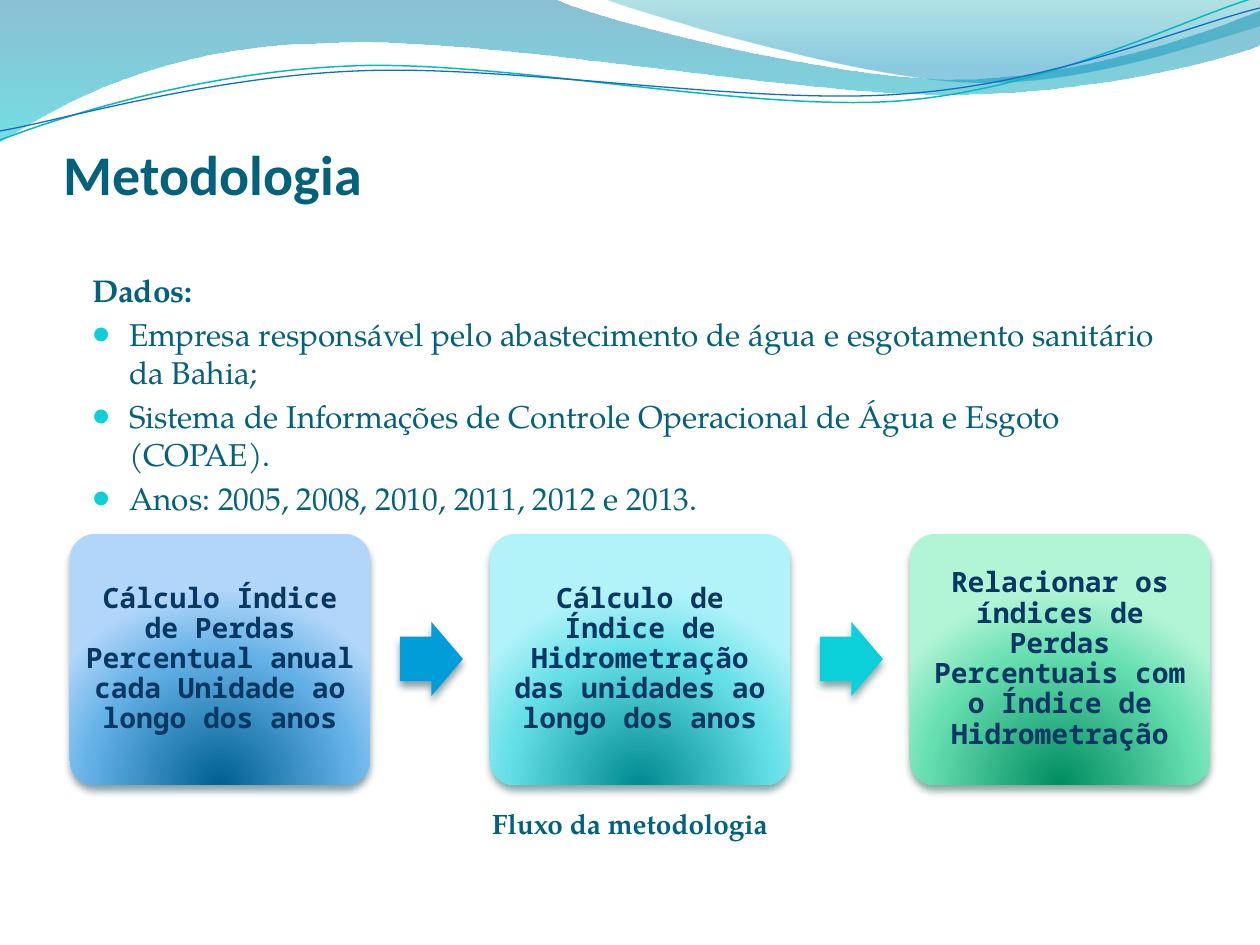
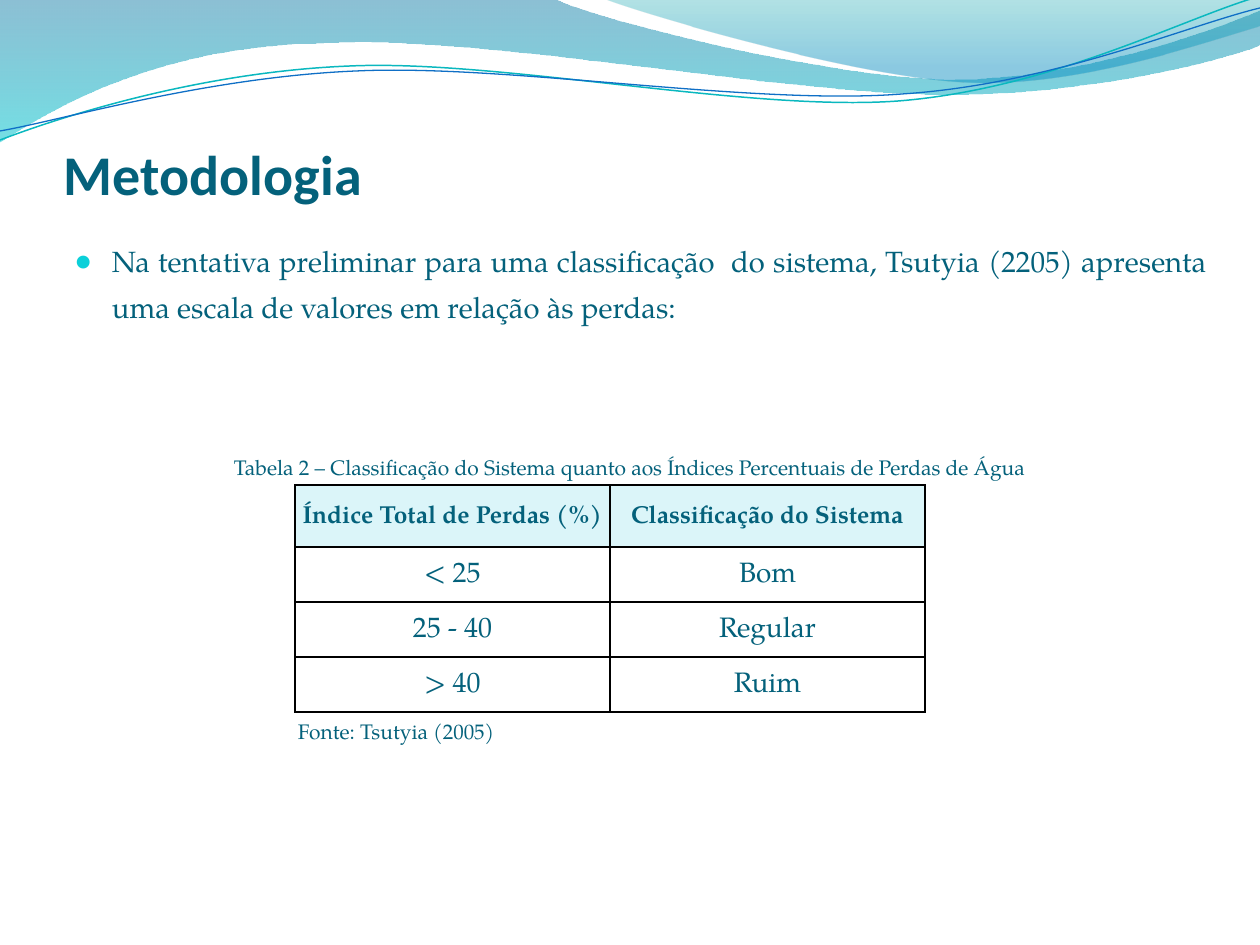
from dataclasses import dataclass

from pptx import Presentation
from pptx.dml.color import RGBColor
from pptx.enum.shapes import MSO_SHAPE as Preset
from pptx.enum.text import MSO_ANCHOR as Anchor, PP_ALIGN as Align
from pptx.oxml import parse_xml
from pptx.oxml.ns import nsdecls, qn
from pptx.util import Emu, Pt

PX = 914400 / 126


@dataclass(frozen=True)
class Theme:
    ink: str = "04617B"
    step_ink: str = "083763"
    bullet: str = "0BD0D9"
    header_fill: str = "DBF5F9"
    border: str = "000000"
    teal_line: str = "0AB8BF"
    blue_line: str = "0F6FC6"
    heading_font: str = "Calibri"
    body_font: str = "TeX Gyre Pagella"
    step_font: str = "Noto Sans Mono"
    title_size: float = 32
    body_size: float = 18
    intro_size: float = 16.7
    label_size: float = 16
    header_size: float = 14
    note_size: float = 12


THEME = Theme()

WAVES = [
    ([(0, 0), (554, -1),
      ((600, 21), (837, 79), (955, 79)),
      ((1075, 79), (1207, 33), (1260, 11)), (1261, 45),
      ((1239, 55), (1096, 96), (940, 94)),
      ((783, 94), (481, 35), (324, 43)),
      ((163, 45), (58, 105), (-1, 142))],
     [(0, "0074A1", 45), (100, "00C6CF", 55)]),
    ([(604, -1),
      ((641, 14), (859, 78), (969, 82)),
      ((1079, 87), (1211, 40), (1260, 26)), (1260, 0)],
     [(0, "00A1A9", 30), (80, "008BBF", 45)]),
]
RIPPLES = [
    ([(0, 140),
      ((60, 117), (199, 72), (349, 66)),
      ((498, 59), (747, 112), (898, 101)),
      ((1050, 89), (1182, 19), (1257, -3))], THEME.teal_line, 0.85),
    ([(0, 131),
      ((59, 121), (207, 77), (357, 71)),
      ((508, 64), (752, 106), (903, 94)),
      ((1053, 84), (1186, 26), (1260, 8))], THEME.blue_line, 0.75),
]
STEPS = [
    ("Cálculo Índice de Perdas Percentual anual cada Unidade ao longo dos anos",
     ("006091", "64B1E7", "B1D6F9"), "00374C", "009DD9"),
    ("Cálculo de Índice de Hidrometração das unidades ao longo dos anos",
     ("008A91", "64DFE7", "B1F3F9"), "024B4E", "0BD0D9"),
    ("Relacionar os índices de Perdas Percentuais com o Índice de Hidrometração",
     ("008C60", "65DEB0", "B2F4D6"), "044A37", None),
]
DATA_POINTS = [
    "Empresa responsável pelo abastecimento de água e esgotamento sanitário da Bahia;",
    "Sistema de Informações de Controle Operacional de Água e Esgoto (COPAE).",
    "Anos: 2005, 2008, 2010, 2011, 2012 e 2013.",
]
INTRO = ("Na tentativa preliminar para uma classificação  do sistema, Tsutyia (2205) "
         "apresenta uma escala de valores em relação às perdas:")
LOSS_CLASSES = [
    ("Índice Total de Perdas (%)", "Classificação do Sistema"),
    ("< 25", "Bom"),
    ("25 - 40", "Regular"),
    ("> 40", "Ruim"),
]


def px(length):
    return Emu(round(length * PX))


def rgb(colour):
    return RGBColor.from_string(colour)


def apply(target, values):
    for name, value in values.items():
        setattr(target, name, value)


def set_insets(target, left, top, right, bottom):
    apply(target, {"margin_left": px(left), "margin_top": px(top),
                   "margin_right": px(right), "margin_bottom": px(bottom)})


def write(para, text, size, font=THEME.body_font, colour=THEME.ink, bold=False, **layout):
    apply(para, layout)
    span = para.add_run()
    span.text = text
    apply(span.font, {"name": font, "size": Pt(size), "bold": bold})
    span.font.color.rgb = rgb(colour)


def add_bullet(para):
    props = para._p.get_or_add_pPr()
    indent = px(37)
    props.set("marL", str(indent))
    props.set("indent", str(-indent))
    for xml in (f'<a:buClr {nsdecls("a")}><a:srgbClr val="{THEME.bullet}"/></a:buClr>',
                f'<a:buSzPct {nsdecls("a")} val="95000"/>',
                f'<a:buFont {nsdecls("a")} typeface="{THEME.heading_font}"/>',
                f'<a:buChar {nsdecls("a")} char="●"/>'):
        props.append(parse_xml(xml))


def add_box(page, area, anchor=Anchor.TOP, wrap=True, insets=(13, 6, 13, 6)):
    frame = page.shapes.add_textbox(*map(px, area)).text_frame
    apply(frame, {"word_wrap": wrap, "vertical_anchor": anchor})
    set_insets(frame, *insets)
    return frame


def set_gradient(shape, stops, direction):
    marks = "".join(
        f'<a:gs pos="{pos * 1000}"><a:srgbClr val="{colour}">'
        f'<a:alpha val="{alpha * 1000}"/></a:srgbClr></a:gs>'
        for pos, colour, alpha in stops)
    shape.fill.background()
    props = shape._element.spPr
    props.replace(props.find(qn("a:noFill")), parse_xml(
        f'<a:gradFill {nsdecls("a")} rotWithShape="1"><a:gsLst>{marks}</a:gsLst>'
        f'{direction}</a:gradFill>'))


def set_shadow(shape, colour):
    shape.shadow.inherit = False
    shape._element.spPr.find(qn("a:effectLst")).append(parse_xml(
        f'<a:outerShdw {nsdecls("a")} blurRad="{Pt(4.5)}" dist="{Pt(3)}" dir="5400000" '
        f'rotWithShape="0"><a:srgbClr val="{colour}"><a:alpha val="48000"/>'
        f'</a:srgbClr></a:outerShdw>'))


def is_curve(piece):
    return isinstance(piece[0], tuple)


def bend_segments(shape, pieces):
    segments = list(shape._element.spPr.iter(qn("a:lnTo")))
    for segment, piece in zip(segments, pieces):
        if is_curve(piece):
            points = "".join(f'<a:pt x="{px(x) - shape.left}" y="{px(y) - shape.top}"/>'
                             for x, y in piece)
            segment.getparent().replace(segment, parse_xml(
                f'<a:cubicBezTo {nsdecls("a")}>{points}</a:cubicBezTo>'))


def add_outline(page, outline, close):
    start, *pieces = outline
    ends = [piece[-1] if is_curve(piece) else piece for piece in pieces]
    builder = page.shapes.build_freeform(*map(px, start))
    builder.add_line_segments([(px(x), px(y)) for x, y in ends], close=close)
    shape = builder.convert_to_shape()
    bend_segments(shape, pieces)
    shape.shadow.inherit = False
    return shape


def add_waves(page):
    for outline, stops in WAVES:
        wave = add_outline(page, outline, True)
        wave.line.fill.background()
        set_gradient(wave, stops, '<a:lin ang="5400000" scaled="0"/>')
    for outline, colour, width in RIPPLES:
        ripple = add_outline(page, outline, False)
        ripple.fill.background()
        ripple.line.color.rgb = rgb(colour)
        ripple.line.width = Pt(width)


def add_page(deck, title):
    page = deck.slides.add_slide(deck.slide_layouts[6])
    add_waves(page)
    frame = add_box(page, (64, 97, 1134, 110), Anchor.BOTTOM, insets=(0, 6, 0, 0))
    write(frame.paragraphs[0], title, THEME.title_size, THEME.heading_font, bold=True)
    return page


def add_preset(page, preset, area, adjustments, shadow):
    shape = page.shapes.add_shape(preset, *map(px, area))
    for index, value in enumerate(adjustments):
        shape.adjustments[index] = value
    shape.line.fill.background()
    set_shadow(shape, shadow)
    return shape


def add_step(page, left, text, colours, shadow):
    card = add_preset(page, Preset.ROUNDED_RECTANGLE, (left, 534, 300, 251), [0.1], shadow)
    set_gradient(card, [(pos, colour, 100) for pos, colour in zip((0, 68, 100), colours)],
                 '<a:path path="circle"><a:fillToRect l="50000" t="130000" '
                 'r="50000" b="-30000"/></a:path>')
    frame = card.text_frame
    apply(frame, {"word_wrap": True, "vertical_anchor": Anchor.MIDDLE})
    set_insets(frame, 2, 2, 2, 2)
    write(frame.paragraphs[0], text, THEME.label_size, THEME.step_font, THEME.step_ink,
          True, alignment=Align.CENTER, line_spacing=0.9)


def add_flow(page):
    for index, (text, colours, shadow, arrow_colour) in enumerate(STEPS):
        left = 70 + 420 * index
        add_step(page, left, text, colours, shadow)
        if arrow_colour:
            arrow = add_preset(page, Preset.RIGHT_ARROW, (left + 330, 622, 63, 74),
                               [0.6, 0.5], shadow)
            arrow.fill.solid()
            arrow.fill.fore_color.rgb = rgb(arrow_colour)


def add_caption(page, area, text, size, bold=False):
    frame = add_box(page, area, Anchor.MIDDLE)
    write(frame.paragraphs[0], text, size, bold=bold, alignment=Align.CENTER)


def set_borders(cell):
    props = cell._tc.get_or_add_tcPr()
    for index, side in enumerate(("lnL", "lnR", "lnT", "lnB")):
        props.insert(index, parse_xml(
            f'<a:{side} {nsdecls("a")} w="{Pt(1)}"><a:solidFill>'
            f'<a:srgbClr val="{THEME.border}"/></a:solidFill></a:{side}>'))


def add_loss_table(page):
    heights = (62, 55, 55, 55)
    area = map(px, (295, 485, 630, sum(heights)))
    table = page.shapes.add_table(len(LOSS_CLASSES), 2, *area).table
    apply(table, {"first_row": False, "horz_banding": False})
    for row, height, values in zip(table.rows, heights, LOSS_CLASSES):
        row.height = px(height)
        header = values is LOSS_CLASSES[0]
        size = THEME.header_size if header else THEME.label_size
        for cell, text in zip(row.cells, values):
            set_insets(cell, 6, 0, 6, 0)
            cell.vertical_anchor = Anchor.MIDDLE
            if header:
                cell.fill.solid()
                cell.fill.fore_color.rgb = rgb(THEME.header_fill)
            else:
                cell.fill.background()
            set_borders(cell)
            write(cell.text_frame.paragraphs[0], text, size, bold=header,
                  alignment=Align.CENTER, line_spacing=1.15)


def build_flow_page(deck):
    page = add_page(deck, "Metodologia")
    add_flow(page)
    frame = add_box(page, (79, 246, 1092, 266))
    write(frame.paragraphs[0], "Dados:", THEME.body_size, bold=True,
          line_spacing=1.5, space_before=Pt(3.6))
    for text in DATA_POINTS:
        para = frame.add_paragraph()
        write(para, text, THEME.body_size, space_before=Pt(3.6))
        add_bullet(para)
    add_caption(page, (0, 800, 1260, 46), "Fluxo da metodologia", THEME.label_size, True)


def build_table_page(deck):
    page = add_page(deck, "Metodologia")
    add_loss_table(page)
    add_caption(page, (0, 448, 1260, 38),
                "Tabela 2 – Classificação do Sistema quanto aos Índices Percentuais "
                "de Perdas de Água", THEME.note_size)
    source = add_box(page, (285, 713, 223, 38), wrap=False)
    write(source.paragraphs[0], "Fonte: Tsutyia (2005)", THEME.note_size)
    intro = add_box(page, (62, 227, 1158, 108)).paragraphs[0]
    write(intro, INTRO, THEME.intro_size, alignment=Align.JUSTIFY,
          line_spacing=1.3, space_before=Pt(3.3))
    add_bullet(intro)


def main():
    deck = Presentation()
    apply(deck, {"slide_width": px(1260), "slide_height": px(945)})
    build_flow_page(deck)
    build_table_page(deck)
    deck.save("out.pptx")


if __name__ == "__main__":
    main()
